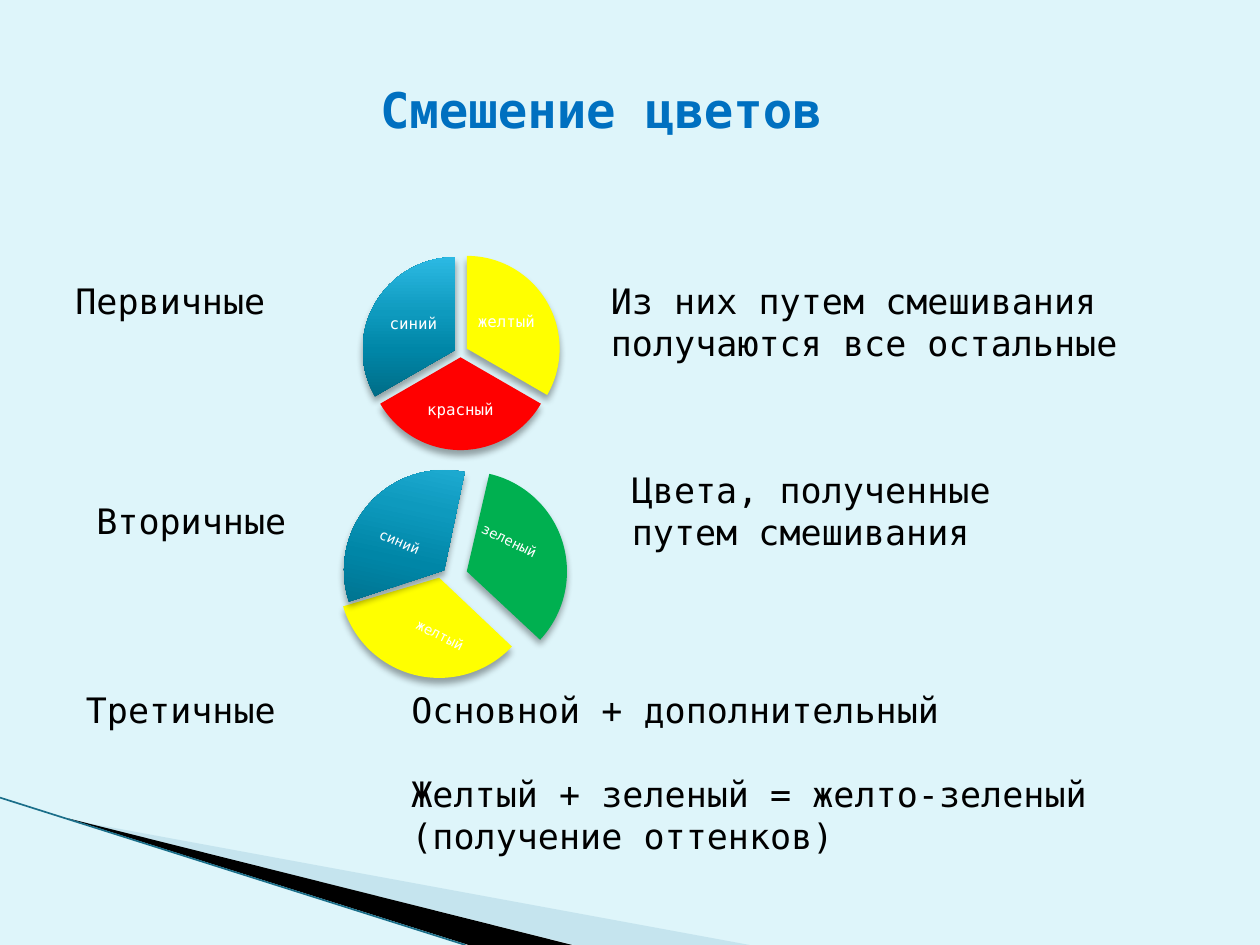
from lxml.etree import SubElement
from pptx import Presentation
from pptx.dml.color import RGBColor as Color
from pptx.enum.shapes import MSO_CONNECTOR as Connector, MSO_SHAPE as Shape
from pptx.enum.text import MSO_ANCHOR as Anchor, MSO_AUTO_SIZE as AutoSize, PP_ALIGN as Align
from pptx.oxml.ns import qn
from pptx.util import Pt

COLORS = {
    "background": "DEF5FA", "title": "0070C0", "text": "000000", "label": "FFFFFF",
    "yellow": "FFFF00", "red": "FF0000", "green": "00B050",
    "swoosh": "A0CBDC", "edge": "1A6E89", "black": "000000",
}
BLUE_STOPS = [(0, "005367"), (50, "0086A7"), (70, "0E9ABE"), (100, "2CB9E3")]
SECTORS = [(162, 18), (18, 90), (90, 162)]  # start and end, in units of 100000


def color(name):
    return Color.from_string(COLORS[name])


def add_element(parent, tag, **attributes):
    return SubElement(parent, qn(tag), {key: str(value) for key, value in attributes.items()})


class SlideBuilder:
    font = "DejaVu Sans Mono"

    def __init__(self, slide):
        self.slide = slide
        slide.background.fill.solid()
        slide.background.fill.fore_color.rgb = color("background")

    def add_run(self, paragraph, text, size, color_name, bold=False):
        run = paragraph.add_run()
        run.text = text
        run.font.name, run.font.size, run.font.bold = self.font, Pt(size), bold
        run.font.color.rgb = color(color_name)

    def title(self, text, left, top, width, height):
        shape = self.slide.shapes.title
        shape.left, shape.top, shape.width, shape.height = map(Pt, (left, top, width, height))
        frame = shape.text_frame
        frame.auto_size, frame.vertical_anchor = AutoSize.NONE, Anchor.TOP
        frame.paragraphs[0].alignment = Align.LEFT
        self.add_run(frame.paragraphs[0], text, 28, "title", bold=True)

    def text(self, lines, left, top, width, height):
        """Each line is a pair of the text and the space before it."""
        frame = self.slide.shapes.add_textbox(*map(Pt, (left, top, width, height))).text_frame
        frame.word_wrap = True
        for index, (line, space) in enumerate(lines):
            paragraph = frame.add_paragraph() if index else frame.paragraphs[0]
            paragraph.space_before = Pt(space)
            self.add_run(paragraph, line, 20, "text")

    def polygon(self, points, color_name, opacity=100):
        start, *others = [(Pt(x), Pt(y)) for x, y in points]
        builder = self.slide.shapes.build_freeform(*start)
        builder.add_line_segments(others)
        shape = builder.convert_to_shape()
        shape.shadow.inherit = False
        shape.line.fill.background()
        shape.fill.solid()
        shape.fill.fore_color.rgb = color(color_name)
        if opacity < 100:
            fill_color = shape._element.spPr.find(".//" + qn("a:srgbClr"))
            add_element(fill_color, "a:alpha", val=opacity * 1000)

    def line(self, start, end, color_name, width):
        connector = self.slide.shapes.add_connector(Connector.STRAIGHT, *map(Pt, start + end))
        connector.line.color.rgb = color(color_name)
        connector.line.width = Pt(width)
        add_element(connector._element.spPr, "a:effectLst")

    def sector(self, shapes, left, top, size, angles, color_name, rotation):
        shape = shapes.add_shape(Shape.PIE, *map(Pt, (left, top, size, size)))
        shape.adjustments[0], shape.adjustments[1] = angles
        shape.rotation = rotation
        properties = shape._element.spPr
        if color_name == "blue":
            shape.fill.gradient()
            shape.fill.gradient_angle = 90
            stops = properties.find(".//" + qn("a:gsLst"))
            for stop in list(stops):
                stops.remove(stop)
            for position, value in BLUE_STOPS:
                stop = add_element(stops, "a:gs", pos=position * 1000)
                add_element(stop, "a:srgbClr", val=value)
        else:
            shape.fill.solid()
            shape.fill.fore_color.rgb = color(color_name)
        shape.line.fill.background()
        shape.shadow.inherit = False
        shadow = add_element(properties.find(qn("a:effectLst")), "a:outerShdw", blurRad=Pt(4),
                             dist=Pt(3), dir=5400000, rotWithShape=0)
        shadow_color = add_element(shadow, "a:srgbClr", val=COLORS["black"])
        add_element(shadow_color, "a:alpha", val=35000)

    def label(self, shapes, text, box, size, rotation):
        shape = shapes.add_textbox(*map(Pt, box))
        shape.rotation = rotation
        frame = shape.text_frame
        frame.word_wrap, frame.vertical_anchor = True, Anchor.MIDDLE
        frame.margin_left = frame.margin_right = frame.margin_top = frame.margin_bottom = Pt(0.8)
        paragraph = frame.paragraphs[0]
        paragraph.alignment, paragraph.line_spacing = Align.CENTER, 0.9
        self.add_run(paragraph, text, size, "label")

    def wheel(self, size, label_size, parts):
        """A wheel of three sectors; each label turns twice as far as its sector."""
        shapes = self.slide.shapes.add_group_shape().shapes
        for angles, (color_name, text, left, top, rotation, box) in zip(SECTORS, parts):
            self.sector(shapes, left, top, size, angles, color_name, rotation)
            self.label(shapes, text, box, label_size, 2 * rotation)


def main():
    presentation = Presentation()
    presentation.slide_width, presentation.slide_height = Pt(720), Pt(540)
    builder = SlideBuilder(presentation.slides.add_slide(presentation.slide_layouts[5]))

    # Corner decoration
    builder.polygon([(39.6, 468.4), (428.4, 540), (328.3, 540)], "swoosh", opacity=40)
    builder.polygon([(38.2, 467.5), (327, 540), (267.8, 540)], "black")
    builder.line((0, 455.8), (266, 540), "edge", 0.95)

    builder.title("Смешение цветов", 210, 42, 480, 41)

    # Primary colours
    builder.text([("Первичные", 0)], 36, 156, 150, 31.5)
    builder.wheel(106, 9, [
        ("yellow", "желтый", 213.8, 146.2, 0, (271.4, 166.3, 36, 35.3)),
        ("red", "красный", 210.2, 151.2, 0, (239, 218.2, 48.2, 33.1)),
        ("blue", "синий", 207.2, 146.9, 0, (218.2, 167.8, 36, 35.3)),
    ])
    builder.text([("Из них путем смешивания получаются все остальные", 0)], 342, 156, 312, 55.5)

    # Secondary colours
    builder.text([("Вторичные", 0)], 48, 282, 138, 31.5)
    builder.wheel(114.5, 8, [
        ("green", "зеленый", 209.5, 269.3, 13, (271.4, 290.2, 38.9, 38.2)),
        ("yellow", "желтый", 193.7, 272.9, 13.4, (225.4, 345.6, 51.8, 35.3)),
        ("blue", "синий", 196.6, 268.6, 11.8, (208.8, 290.9, 38.9, 38.2)),
    ])
    builder.text([("Цвета, полученные путем смешивания", 0)], 354, 264, 288, 55.5)

    # Tertiary colours
    builder.text([("Третичные", 0)], 42, 390, 144, 31.5)
    builder.text([
        ("Основной + дополнительный", 0),
        ("Желтый + зеленый = желто-зеленый", 24),
        ("(получение оттенков)", 0),
    ], 228, 390, 414, 104.5)

    presentation.save("out.pptx")


if __name__ == "__main__":
    main()
